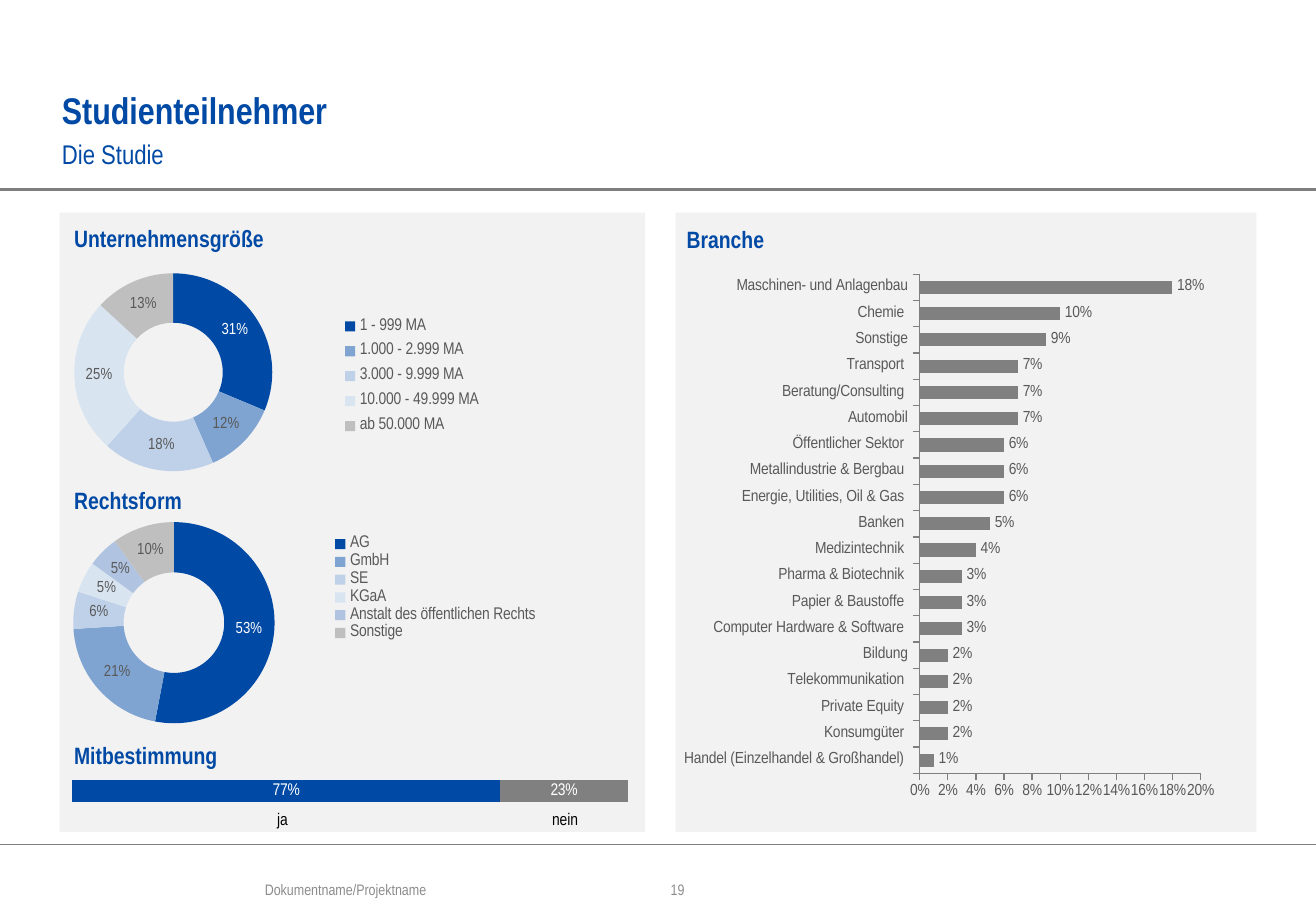
from dataclasses import dataclass
from typing import NamedTuple

from lxml.etree import SubElement
from pptx import Presentation
from pptx.chart.data import CategoryChartData
from pptx.dml.color import RGBColor
from pptx.enum.chart import XL_CHART_TYPE as Kind, XL_LABEL_POSITION as LabelPos
from pptx.enum.chart import XL_LEGEND_POSITION as LegendPos, XL_TICK_MARK as Tick
from pptx.enum.shapes import MSO_CONNECTOR as Connector, MSO_SHAPE as Shape
from pptx.enum.text import MSO_ANCHOR as Anchor, MSO_AUTO_SIZE as AutoSize, PP_ALIGN as Align
from pptx.oxml import parse_xml
from pptx.oxml.ns import nsdecls, qn
from pptx.util import Inches, Pt


@dataclass(frozen=True)
class Theme:
    """Colours, type sizes and font of the slide."""
    font: str = "Arial Narrow"
    blue: str = "0049A4"
    gray: str = "808080"
    rule: str = "7F7F7F"
    card: str = "F2F2F2"
    label: str = "595959"
    footer: str = "8C8C8C"
    white: str = "FFFFFF"
    black: str = "000000"
    shades: tuple = ("0049A4", "7FA4D1", "BFD1E8", "D9E4F1", "B0C4E1")
    other: str = "BFBFBF"
    title: float = 22
    subtitle: float = 16
    heading: float = 14
    body: float = 10
    slice: float = 9.5
    small: float = 9


THEME = Theme()


class Box(NamedTuple):
    """A rectangle in inches."""
    x: float
    y: float
    w: float
    h: float

    def within(self, dx, dy, w, h):
        """Return a box offset from this one's corner."""
        return Box(self.x + dx, self.y + dy, w, h)

    def emu(self):
        """Return the rectangle as lengths."""
        return [Inches(value) for value in self]


COMPANY_SIZES = [("1 - 999 MA", 31), ("1.000 - 2.999 MA", 12), ("3.000 - 9.999 MA", 18),
                 ("10.000 - 49.999 MA", 25), ("ab 50.000 MA", 13)]
LEGAL_FORMS = [("AG", 53), ("GmbH", 21), ("SE", 6), ("KGaA", 5),
               ("Anstalt des öffentlichen Rechts", 5), ("Sonstige", 10)]
SECTORS = [("Handel (Einzelhandel & Großhandel) ", 0.01), ("Konsumgüter ", 0.02),
           ("Private Equity ", 0.02), ("Telekommunikation ", 0.02), ("Bildung", 0.02),
           ("Computer Hardware & Software ", 0.03), ("Papier & Baustoffe ", 0.03),
           ("Pharma & Biotechnik ", 0.03), ("Medizintechnik ", 0.04), ("Banken ", 0.05),
           ("Energie, Utilities, Oil & Gas ", 0.06), ("Metallindustrie & Bergbau ", 0.06),
           ("Öffentlicher Sektor ", 0.06), ("Automobil", 0.07), ("Beratung/Consulting ", 0.07),
           ("Transport ", 0.07), ("Sonstige", 0.09), ("Chemie ", 0.1),
           ("Maschinen- und Anlagenbau", 0.18)]


def style_font(font, size, color, bold=False):
    """Apply the theme font with a size and colour."""
    for name, value in {"name": THEME.font, "size": Pt(size), "bold": bold}.items():
        setattr(font, name, value)
    font.color.rgb = RGBColor.from_string(color)


def fill_solid(target, color):
    """Fill a shape or chart format with one colour."""
    target.fill.solid()
    target.fill.fore_color.rgb = RGBColor.from_string(color)


def write(holder, words, size, color, bold=False, spacing=None, align=Align.LEFT, **frame_format):
    """Write one paragraph into a shape without insets."""
    frame = holder.text_frame
    settings = {"margin_left": 0, "margin_top": 0, "margin_right": 0, "margin_bottom": 0,
                "word_wrap": True, "auto_size": AutoSize.NONE, "vertical_anchor": Anchor.TOP}
    for name, value in (settings | frame_format).items():
        setattr(frame, name, value)
    paragraph = frame.paragraphs[0]
    paragraph.text = words
    paragraph.alignment = align
    paragraph.line_spacing = spacing
    style_font(paragraph.runs[0].font, size, color, bold)


def add_text(slide, box, words, size, color, **options):
    """Add a text box."""
    write(slide.shapes.add_textbox(*box.emu()), words, size, color, **options)


def add_heading(slide, box, words):
    """Add a section heading."""
    add_text(slide, box, words, THEME.heading, THEME.blue, bold=True)


def add_rule(slide, y, width):
    """Add a horizontal line across the slide."""
    rule = slide.shapes.add_connector(Connector.STRAIGHT, 0, Inches(y), Inches(10.83), Inches(y))
    rule.line.width = Pt(width)
    rule.line.color.rgb = RGBColor.from_string(THEME.rule)
    SubElement(rule.element.spPr, qn("a:effectLst"))


def add_card(slide, box):
    """Add the pale panel behind a column."""
    card = slide.shapes.add_shape(Shape.RECTANGLE, *box.emu())
    card.shadow.inherit = False
    fill_solid(card, THEME.card)
    card.line.fill.background()


def layout_xml(place, inner=False):
    """Return a manual chart layout from fractions of the chart."""
    target = '<c:layoutTarget val="inner"/>' if inner else ""
    modes = "".join(f'<c:{axis}Mode val="edge"/>' for axis in "xy")
    sizes = "".join(f'<c:{side} val="{value}"/>' for side, value in zip("xywh", place))
    return parse_xml(f'<c:layout {nsdecls("c")}><c:manualLayout>{target}{modes}{sizes}'
                     '</c:manualLayout></c:layout>')


def add_chart(slide, box, kind, categories, series, plot_place):
    """Add a transparent chart with a fixed plot area."""
    chart_data = CategoryChartData(number_format="0%" if kind != Kind.DOUGHNUT else "General")
    chart_data.categories = categories
    for number, values in enumerate(series, 1):
        chart_data.add_series(f"Series {number}", values)
    chart = slide.shapes.add_chart(kind, *box.emu(), chart_data).chart
    chart.has_title = chart.has_legend = False
    style_font(chart.font, THEME.body, THEME.black)
    area = chart.element.find(qn("c:chart"))
    plot_area = area.find(qn("c:plotArea"))
    for old in plot_area.findall(qn("c:layout")):
        plot_area.remove(old)
    plot_area.insert(0, layout_xml(plot_place, inner=True))
    clear = f'<c:spPr {nsdecls("c", "a")}><a:noFill/><a:ln><a:noFill/></a:ln></c:spPr>'
    plot_area.append(parse_xml(clear))
    area.addnext(parse_xml(clear))
    return chart


def format_labels(labels, size, color, **settings):
    """Show data labels as whole percentages."""
    style_font(labels.font, size, color)
    for name, value in ({"number_format": "0%", "number_format_is_linked": False} | settings).items():
        setattr(labels, name, value)


def add_doughnut(slide, box, shares, plot_place, legend_place):
    """Add a doughnut with percentages and a legend on its right."""
    names, values = zip(*shares)
    chart = add_chart(slide, box, Kind.DOUGHNUT, names, [values], plot_place)
    chart.has_legend = True
    chart.legend.position = LegendPos.RIGHT
    chart.legend.include_in_layout = False
    style_font(chart.legend.font, THEME.body, THEME.label)
    legend = chart.element.find(".//" + qn("c:legend"))
    for old in legend.findall(qn("c:layout")):
        legend.remove(old)
    legend.find(qn("c:legendPos")).addnext(layout_xml(legend_place))
    ring = chart.plots[0].series[0]
    for index, color in enumerate((*THEME.shades[:len(shares) - 1], THEME.other)):
        fill_solid(ring.points[index].format, color)
    format_labels(ring.data_labels, THEME.slice, THEME.label,
                  show_percentage=True, show_value=False)
    style_font(ring.points[0].data_label.font, THEME.slice, THEME.white)
    first = chart.element.find(".//" + qn("c:dLbl"))
    for tag, shown in {"c:showVal": "0", "c:showPercent": "1"}.items():
        first.find(qn(tag)).set("val", shown)


def add_codetermination(slide, box):
    """Add the stacked bar of yes and no shares with its captions."""
    chart = add_chart(slide, box, Kind.BAR_STACKED, ["1"], [[0.77], [0.23]],
                      (0.034, 0.092, 0.937, 0.596))
    chart.plots[0].gap_width, chart.plots[0].overlap = 150, 100
    chart.category_axis.visible = chart.value_axis.visible = False
    chart.value_axis.has_major_gridlines = False
    chart.value_axis.minimum_scale, chart.value_axis.maximum_scale = 0, 1
    for share, color in zip(chart.plots[0].series, (THEME.blue, THEME.gray)):
        fill_solid(share.format, color)
        format_labels(share.data_labels, THEME.body, THEME.white, show_value=True)
    for dx, width, answer in ((1.75, 0.29, "ja"), (4.01, 0.42, "nein")):
        add_text(slide, box.within(dx, 0.44, width, 0.17), answer, THEME.body, THEME.black,
                 align=Align.CENTER, word_wrap=False)


def add_sector_bars(slide, box):
    """Add the bar chart of sectors."""
    names, values = zip(*SECTORS)
    chart = add_chart(slide, box, Kind.BAR_CLUSTERED, names, [values],
                      (0.412, 0.002, 0.494, 0.998))
    chart.plots[0].gap_width = 100
    bars = chart.plots[0].series[0]
    fill_solid(bars.format, THEME.gray)
    format_labels(bars.data_labels, THEME.body, THEME.label, show_value=True,
                  position=LabelPos.OUTSIDE_END)
    for axis in (chart.category_axis, chart.value_axis):
        axis.major_tick_mark = Tick.OUTSIDE
        style_font(axis.tick_labels.font, THEME.body, THEME.label)
        axis.format.line.color.rgb = RGBColor.from_string(THEME.rule)
    scale = chart.value_axis
    for name, value in {"minimum_scale": 0, "maximum_scale": 0.2, "major_unit": 0.02}.items():
        setattr(scale, name, value)
    scale.tick_labels.number_format, scale.tick_labels.number_format_is_linked = "0%", False
    scale.major_gridlines.format.line.color.rgb = RGBColor.from_string(THEME.card)


def add_header(slide, box):
    """Place the title and subtitle above the upper rule."""
    title = slide.shapes.title
    title.left, title.top, title.width, title.height = box.within(0, 0, box.w, 0.76).emu()
    write(title, "Studienteilnehmer", THEME.title, THEME.blue, bold=True, spacing=Pt(27),
          vertical_anchor=Anchor.BOTTOM)
    add_text(slide, box.within(0, 0.76, box.w, 0.26), "Die Studie", THEME.subtitle, THEME.blue,
             spacing=Pt(22))
    add_rule(slide, box.y + box.h, 2)


def add_company_column(slide, box):
    """Build the column on size, legal form and codetermination."""
    add_card(slide, box)
    for dy, words in ((0.09, "Unternehmensgröße"), (2.25, "Rechtsform"), (4.35, "Mitbestimmung")):
        add_heading(slide, box.within(0.12, dy, 4.1, 0.24), words)
    add_doughnut(slide, box.within(-0.24, 0.5, 4, 1.63), COMPANY_SIZES,
                 (0.09, 0, 0.408, 1), (0.585, 0.18, 0.4, 0.68))
    add_doughnut(slide, box.within(-0.01, 2.49, 4.11, 1.73), LEGAL_FORMS,
                 (0.03, 0.034, 0.403, 0.958), (0.52, 0.09, 0.47, 0.52))
    add_codetermination(slide, box.within(-0.06, 4.47, 4.88, 0.76))


def add_sector_column(slide, box):
    """Build the column on sectors."""
    add_card(slide, box)
    add_heading(slide, box.within(0.09, 0.1, 4.1, 0.24), "Branche")
    add_sector_bars(slide, box.within(0.07, 0.5, 4.69, 4.33))


def add_footer(slide, box):
    """Add the lower rule, document name and page number."""
    add_rule(slide, box.y, 0.75)
    for dx, width, words in ((2.18, 3.13, "Dokumentname/Projektname"), (5.52, 1.2, "19")):
        add_text(slide, box.within(dx, 0.3, width, 0.13), words, THEME.small, THEME.footer)


def main():
    """Build and save the slide."""
    deck = Presentation()
    deck.slide_width, deck.slide_height = Inches(10.83), Inches(7.5)
    slide = deck.slides.add_slide(deck.slide_layouts[5])
    add_header(slide, Box(0.51, 0.33, 9.81, 1.23))
    add_company_column(slide, Box(0.49, 1.75, 4.82, 5.1))
    add_sector_column(slide, Box(5.56, 1.75, 4.78, 5.1))
    add_footer(slide, Box(0, 6.95, 10.83, 0.55))
    deck.save("out.pptx")


if __name__ == "__main__":
    main()
